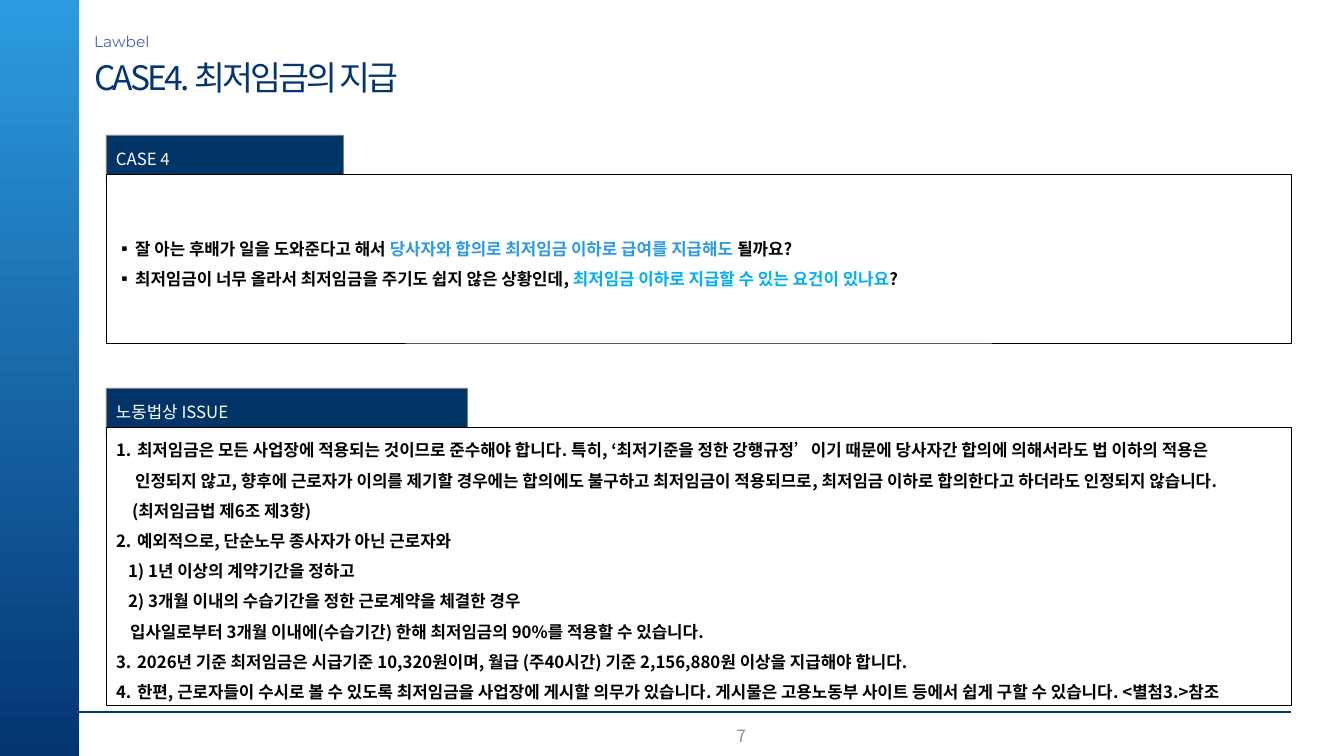
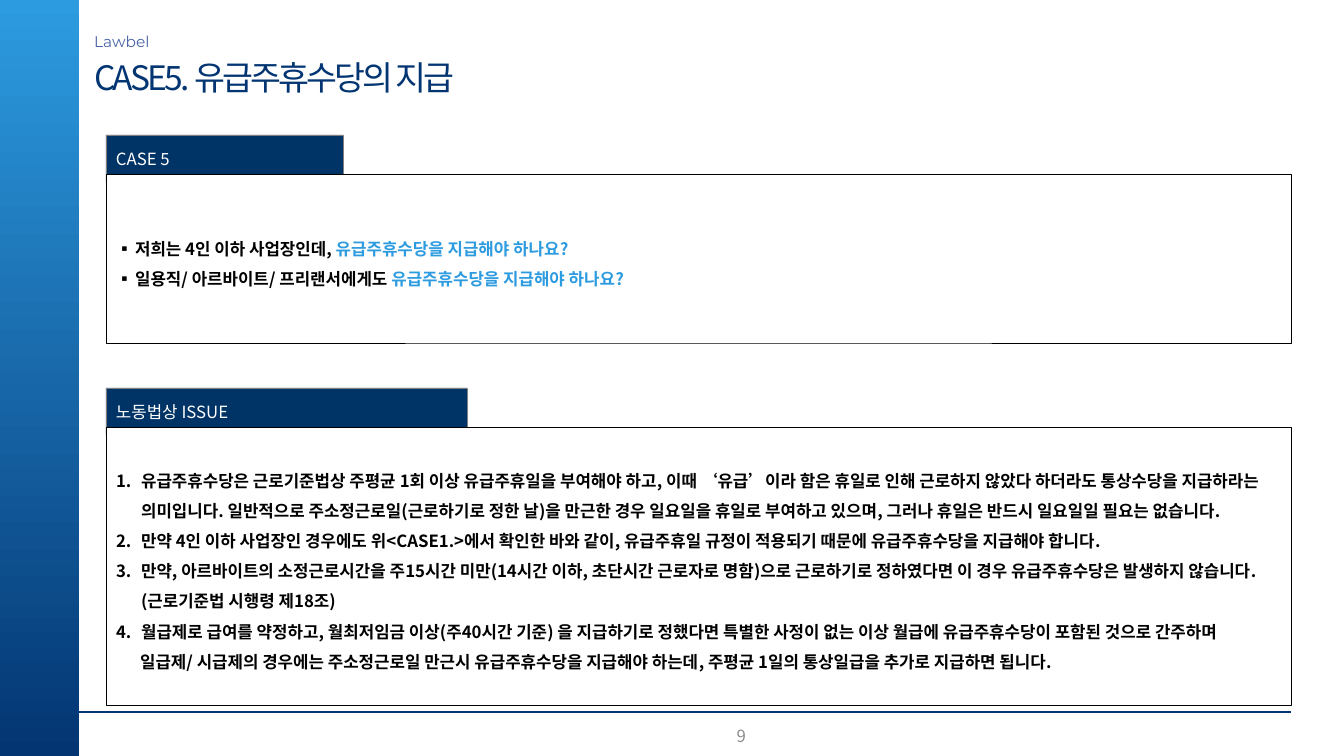
from lxml.etree import SubElement
from pptx import Presentation
from pptx.dml.color import RGBColor
from pptx.enum.shapes import MSO_CONNECTOR, MSO_SHAPE
from pptx.enum.text import MSO_ANCHOR, MSO_AUTO_SIZE, PP_ALIGN
from pptx.oxml.ns import qn
from pptx.util import Pt

PX = 914400 / 100.8
FONT = "Noto Sans CJK KR"
COLORS = {
    "sky": "2D9BE0", "navy": "033572", "tab": "003366", "tab_line": "808080",
    "brand": "4963A7", "page": "8C8C8C", "cyan": "00B0F0",
    "black": "000000", "white": "FFFFFF",
}
PANEL_X, PANEL_W = 106, 1185
TAB_H, TAB_RISE = 47, 39
BULLET = "▪"

# A line is (marker, indent, runs); a run is (text, colour).
# A marker is a bullet, a number or None for an unmarked line.
CASES = [
    {
        "page": "7", "title": "CASE4. 최저임금의 지급", "tab": "CASE 4",
        "questions": [
            (BULLET, 19, [("잘 아는 후배가 일을 도와준다고 해서 ", "black"),
                          ("당사자와 합의로 최저임금 이하로 급여를 지급해도 ", "sky"),
                          ("될까요?", "black")]),
            (BULLET, 19, [("최저임금이 너무 올라서 최저임금을 주기도 쉽지 않은 상황인데, ", "black"),
                          ("최저임금 이하로 지급할 수 있는 요건이 있나요", "cyan"),
                          ("?", "black")]),
        ],
        "issues": [
            (1, 21, [("최저임금은 모든 사업장에 적용되는 것이므로 준수해야 합니다. 특히, ‘최저기준을 정한 "
                      "강행규정’이기 때문에 당사자간 합의에 의해서라도 법 이하의 적용은", "black")]),
            (None, 19, [("인정되지 않고, 향후에 근로자가 이의를 제기할 경우에는 합의에도 불구하고 최저임금이 "
                         "적용되므로, 최저임금 이하로 합의한다고 하더라도 인정되지 않습니다.", "black")]),
            (None, 16, [("(최저임금법 제6조 제3항)", "black")]),
            (2, 21, [("예외적으로, 단순노무 종사자가 아닌 근로자와", "black")]),
            (None, 12, [("1) 1년 이상의 계약기간을 정하고", "black")]),
            (None, 12, [("2) 3개월 이내의 수습기간을 정한 근로계약을 체결한 경우", "black")]),
            (None, 14, [("입사일로부터 3개월 이내에(수습기간) 한해 최저임금의 90%를 적용할 수 있습니다.",
                         "black")]),
            (3, 21, [("2026년 기준 최저임금은 시급기준 10,320원이며, 월급 (주40시간) 기준 "
                      "2,156,880원 이상을 지급해야 합니다.", "black")]),
            (4, 21, [("한편, 근로자들이 수시로 볼 수 있도록 최저임금을 사업장에 게시할 의무가 있습니다. "
                      "게시물은 고용노동부 사이트 등에서 쉽게 구할 수 있습니다. <별첨3.>참조", "black")]),
        ],
    },
    {
        "page": "9", "title": "CASE5. 유급주휴수당의 지급", "tab": "CASE 5",
        "questions": [
            (BULLET, 19, [("저희는 4인 이하 사업장인데, ", "black"),
                          ("유급주휴수당을 지급해야 하나요?", "sky")]),
            (BULLET, 19, [("일용직/ 아르바이트/ 프리랜서에게도 ", "black"),
                          ("유급주휴수당을 지급해야 하나요?", "sky")]),
        ],
        "issues": [
            (1, 25, [("유급주휴수당은 근로기준법상 주평균 1회 이상 유급주휴일을 부여해야 하고, 이때 ‘유급’이라 "
                      "함은 휴일로 인해 근로하지 않았다 하더라도 통상수당을 지급하라는 의미입니다. 일반적으로 "
                      "주소정근로일(근로하기로 정한 날)을 만근한 경우 일요일을 휴일로 부여하고 있으며, 그러나 "
                      "휴일은 반드시 일요일일 필요는 없습니다.", "black")]),
            (2, 25, [("만약 4인 이하 사업장인 경우에도 위<CASE1.>에서 확인한 바와 같이, 유급주휴일 규정이 "
                      "적용되기 때문에 유급주휴수당을 지급해야 합니다.", "black")]),
            (3, 25, [("만약, 아르바이트의 소정근로시간을 주15시간 미만(14시간 이하, 초단시간 근로자로 "
                      "명함)으로 근로하기로 정하였다면 이 경우 유급주휴수당은 발생하지 "
                      "않습니다.(근로기준법 시행령 제18조)", "black")]),
            (4, 25, [("월급제로 급여를 약정하고, 월최저임금 이상(주40시간 기준) 을 지급하기로 정했다면 특별한 "
                      "사정이 없는 이상 월급에 유급주휴수당이 포함된 것으로 간주하며", "black")]),
            (None, 24, [("일급제/ 시급제의 경우에는 주소정근로일 만근시 유급주휴수당을 지급해야 하는데, 주평균 "
                         "1일의 통상일급을 추가로 지급하면 됩니다.", "black")]),
        ],
    },
]


def px(n):
    return round(n * PX)


def box(x, y, w, h):
    return px(x), px(y), px(w), px(h)


def rgb(name):
    return RGBColor.from_string(COLORS[name])


def place(sp, x, y, w, h):
    sp.left, sp.top, sp.width, sp.height = box(x, y, w, h)


def paint(sp, fill, line):
    sp.fill.solid()
    sp.fill.fore_color.rgb = rgb(fill)
    sp.line.color.rgb = rgb(line)
    sp.line.width = Pt(0.5)


def style_run(r, size, color, bold=False, font=FONT):
    r.font.size, r.font.bold, r.font.name = Pt(size), bold, font
    r.font.color.rgb = rgb(color)
    SubElement(r._r.get_or_add_rPr(), qn("a:ea"), typeface=font)


def set_text(tf, text, size, color, align=PP_ALIGN.LEFT, font=FONT):
    tf.text = text
    p = tf.paragraphs[0]
    p.alignment = align
    style_run(p.runs[0], size, color, font=font)
    return p.runs[0]


def set_marker(p, marker, indent):
    """Give the paragraph a hanging bullet or number, or a plain indent."""
    pPr = p._p.get_or_add_pPr()
    pPr.set("marL", str(px(indent)))
    pPr.set("indent", str(-px(indent) if marker else 0))
    if marker is None:
        SubElement(pPr, qn("a:buNone"))
        return
    SubElement(pPr, qn("a:buFont"), typeface=FONT)
    if marker == BULLET:
        SubElement(pPr, qn("a:buChar"), char=marker)
    else:
        SubElement(pPr, qn("a:buAutoNum"), type="arabicPeriod", startAt=str(marker))


def add_frame(s, page):
    """Draw the side band, footer rule, brand name and page number."""
    band = s.shapes.add_shape(MSO_SHAPE.RECTANGLE, *box(0, 0, 79, 756))
    band.shadow.inherit = False
    band.line.fill.background()
    band.fill.gradient()
    band.fill.gradient_angle = 270
    for stop, color in zip(band.fill.gradient_stops, ("sky", "navy")):
        stop.color.rgb = rgb(color)

    rule = s.shapes.add_connector(MSO_CONNECTOR.STRAIGHT, px(79), px(712), px(1291), px(712))
    rule.line.color.rgb = rgb("navy")
    rule.line.width = Pt(0.75)
    SubElement(rule._element.spPr, qn("a:effectLst"))

    brand = s.shapes.add_textbox(*box(94, 27, 68, 29)).text_frame
    brand.word_wrap = False
    brand.margin_left = 0
    set_text(brand, "Lawbel", 11, "brand", font="Montserrat")

    number = s.shapes.add_textbox(*box(454, 716, 302, 40)).text_frame
    number.word_wrap = True
    number.vertical_anchor = MSO_ANCHOR.MIDDLE
    set_text(number, page, 12, "page", PP_ALIGN.RIGHT)


def set_title(sp, text):
    place(sp, 94, 57, 890, 40)
    tf = sp.text_frame
    tf.margin_left = tf.margin_right = tf.margin_top = tf.margin_bottom = 0
    tf.vertical_anchor = MSO_ANCHOR.MIDDLE
    tf.auto_size = MSO_AUTO_SIZE.NONE
    r = set_text(tf, text, 24, "navy")
    r._r.get_or_add_rPr().set("spc", "-200")


def fill_panel(s, panel, y, h, tab_w, tab_text, lines):
    """Place a list panel with its heading tab tucked behind the top edge."""
    place(panel, PANEL_X, y, PANEL_W, h)
    paint(panel, "white", "black")
    tf = panel.text_frame
    tf.vertical_anchor = MSO_ANCHOR.MIDDLE
    tf.auto_size = MSO_AUTO_SIZE.NONE
    for i, (marker, indent, runs) in enumerate(lines):
        p = tf.add_paragraph() if i else tf.paragraphs[0]
        set_marker(p, marker, indent)
        p.alignment = PP_ALIGN.LEFT
        p.line_spacing = 1.5
        p.space_before = Pt(0)
        for text, color in runs:
            r = p.add_run()
            r.text = text
            style_run(r, 12, color, bold=True)

    tab = s.shapes.add_shape(MSO_SHAPE.RECTANGLE, *box(PANEL_X, y - TAB_RISE, tab_w, TAB_H))
    tab.shadow.inherit = False
    paint(tab, "tab", "tab_line")
    tab.text_frame.vertical_anchor = MSO_ANCHOR.MIDDLE
    set_text(tab.text_frame, tab_text, 12, "white")
    panel._element.addprevious(tab._element)


def add_case(prs, case):
    s = prs.slides.add_slide(prs.slide_layouts[3])
    title, questions, issues = s.placeholders
    add_frame(s, case["page"])
    set_title(title, case["title"])
    fill_panel(s, questions, 174, 169, 237, case["tab"], case["questions"])
    fill_panel(s, issues, 427, 278, 361, "노동법상 ISSUE", case["issues"])


def main():
    prs = Presentation()
    prs.slide_width, prs.slide_height = px(1344), px(756)
    for case in CASES:
        add_case(prs, case)
    prs.save("out.pptx")


if __name__ == "__main__":
    main()
